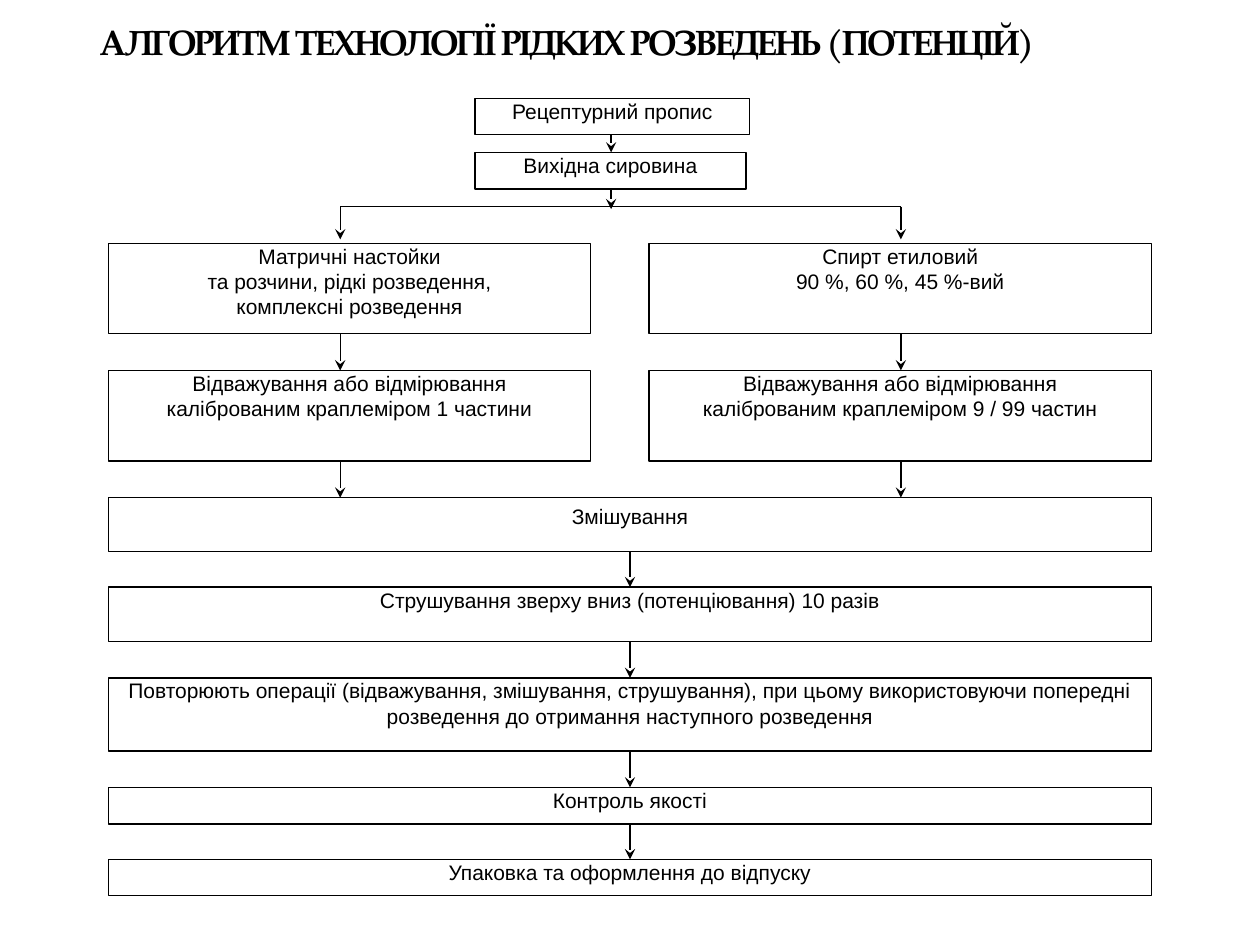
from dataclasses import dataclass

from lxml.etree import SubElement
from pptx import Presentation
from pptx.dml.color import RGBColor
from pptx.enum.shapes import MSO_CONNECTOR, MSO_SHAPE
from pptx.enum.text import MSO_ANCHOR, MSO_AUTO_SIZE, PP_ALIGN
from pptx.oxml.ns import qn
from pptx.util import Inches, Pt

BLACK = RGBColor(0x00, 0x00, 0x00)
WHITE = RGBColor(0xFF, 0xFF, 0xFF)
LINE_WIDTH = Pt(0.75)

# Shared columns of the flowchart, in inches
LEFT, FULL_WIDTH = 0.86, 8.28
LEFT_WIDTH = 3.83
RIGHT, RIGHT_WIDTH = 5.15, 3.99
TOP_LEFT = 3.77
TOP_AXIS, LEFT_AXIS, RIGHT_AXIS, CENTER_AXIS = 4.85, 2.7, 7.15, 5
BRANCH_TOP = 1.64


@dataclass(frozen=True)
class Step:
    """A box of the flowchart, in inches."""
    text: str
    left: float
    top: float
    width: float
    height: float
    inset_x: float = 0
    inset_y: float = 0

    @property
    def bottom(self) -> float:
        return self.top + self.height


RECIPE = Step("Рецептурний пропис", TOP_LEFT, 0.78, 2.18, 0.29)
RAW = Step("Вихідна сировина", TOP_LEFT, 1.21, 2.15, 0.29)

TINCTURES = Step("Матричні настойки\nта розчини, рідкі розведення,\nкомплексні розведення",
                 LEFT, 1.93, LEFT_WIDTH, 0.72)
WEIGH_TINCTURE = Step("Відважування або відмірювання\nкаліброваним краплеміром 1 частини",
                      LEFT, 2.94, LEFT_WIDTH, 0.72)
ALCOHOL = Step("Спирт етиловий\n90 %, 60 %, 45 %-вий",
               RIGHT, 1.93, RIGHT_WIDTH, 0.72, inset_x=0.1)
WEIGH_ALCOHOL = Step("Відважування або відмірювання\nкаліброваним краплеміром 9 / 99 частин",
                     RIGHT, 2.94, RIGHT_WIDTH, 0.72)

MIXING = Step("Змішування", LEFT, 3.95, FULL_WIDTH, 0.43, 0.1, 0.05)
SHAKING = Step("Струшування зверху вниз (потенціювання) 10 разів",
               LEFT, 4.66, FULL_WIDTH, 0.43)
REPEAT = Step("Повторюють операції (відважування, змішування, струшування), "
              "при цьому використовуючи попередні розведення "
              "до отримання наступного розведення",
              LEFT, 5.38, FULL_WIDTH, 0.58)
CONTROL = Step("Контроль якості", LEFT, 6.25, FULL_WIDTH, 0.29)
PACKING = Step("Упаковка та оформлення до відпуску", LEFT, 6.82, FULL_WIDTH, 0.29)

# Each chain runs down one axis, with an arrow between neighbours
CHAINS = [
    (TOP_AXIS, [RECIPE, RAW]),
    (LEFT_AXIS, [TINCTURES, WEIGH_TINCTURE, MIXING]),
    (RIGHT_AXIS, [ALCOHOL, WEIGH_ALCOHOL, MIXING]),
    (CENTER_AXIS, [MIXING, SHAKING, REPEAT, CONTROL, PACKING]),
]


def write_text(frame, text: str, *, font: str = "Arial", size: float = 12,
               bold: bool = False, align=PP_ALIGN.CENTER, anchor=MSO_ANCHOR.TOP,
               spacing: float = 0, inset_x: float = 0, inset_y: float = 0) -> None:
    """Fill a text frame, one paragraph for each line of the text."""
    frame.word_wrap = True
    frame.auto_size = MSO_AUTO_SIZE.NONE
    frame.vertical_anchor = anchor
    frame.margin_left = frame.margin_right = Inches(inset_x)
    frame.margin_top = frame.margin_bottom = Inches(inset_y)
    for index, line in enumerate(text.split("\n")):
        para = frame.add_paragraph() if index else frame.paragraphs[0]
        para.alignment = align
        span = para.add_run()
        span.text = line
        span.font.name = font
        span.font.size = Pt(size)
        span.font.bold = bold
        span.font.color.rgb = BLACK
        if spacing:
            span.font._element.set("spc", str(round(spacing * 100)))


def draw_step(page, step: Step) -> None:
    box = page.shapes.add_shape(MSO_SHAPE.RECTANGLE, Inches(step.left), Inches(step.top),
                                Inches(step.width), Inches(step.height))
    box.shadow.inherit = False
    box.fill.solid()
    box.fill.fore_color.rgb = WHITE
    box.line.color.rgb = BLACK
    box.line.width = LINE_WIDTH
    write_text(box.text_frame, step.text, inset_x=step.inset_x, inset_y=step.inset_y)


def draw_line(page, start: tuple[float, float], end: tuple[float, float],
              arrow: bool = True) -> None:
    line = page.shapes.add_connector(MSO_CONNECTOR.STRAIGHT,
                                     *(Inches(value) for value in start + end))
    line.line.color.rgb = BLACK
    line.line.width = LINE_WIDTH
    if arrow:
        SubElement(line.line._get_or_add_ln(), qn("a:tailEnd"), type="stealth")
    SubElement(line._element.spPr, qn("a:effectLst"))


def main() -> None:
    deck = Presentation()
    deck.slide_width, deck.slide_height = Inches(10), Inches(7.5)
    page = deck.slides.add_slide(deck.slide_layouts[5])

    # Title
    title = page.shapes.title
    title.left, title.top = Inches(0.7), Inches(0)
    title.width, title.height = Inches(9), Inches(0.55)
    write_text(title.text_frame, "АЛГОРИТМ ТЕХНОЛОГІЇ РІДКИХ РОЗВЕДЕНЬ (ПОТЕНЦІЙ)",
               font="TeX Gyre Pagella", size=20, bold=True, align=PP_ALIGN.LEFT,
               anchor=MSO_ANCHOR.BOTTOM, spacing=-1, inset_x=0.1, inset_y=0.05)

    # Boxes
    for step in (RECIPE, RAW, TINCTURES, ALCOHOL, WEIGH_TINCTURE, WEIGH_ALCOHOL,
                 MIXING, SHAKING, REPEAT, CONTROL, PACKING):
        draw_step(page, step)

    # Arrows down each chain
    for axis, steps in CHAINS:
        for upper, lower in zip(steps, steps[1:]):
            draw_line(page, (axis, upper.bottom), (axis, lower.top))

    # Fork from the raw material to both columns
    draw_line(page, (TOP_AXIS, RAW.bottom), (TOP_AXIS, 1.66))
    draw_line(page, (LEFT_AXIS, BRANCH_TOP), (RIGHT_AXIS, BRANCH_TOP), arrow=False)
    for axis in (LEFT_AXIS, RIGHT_AXIS):
        draw_line(page, (axis, BRANCH_TOP), (axis, 1.9))

    deck.save("out.pptx")


if __name__ == "__main__":
    main()
